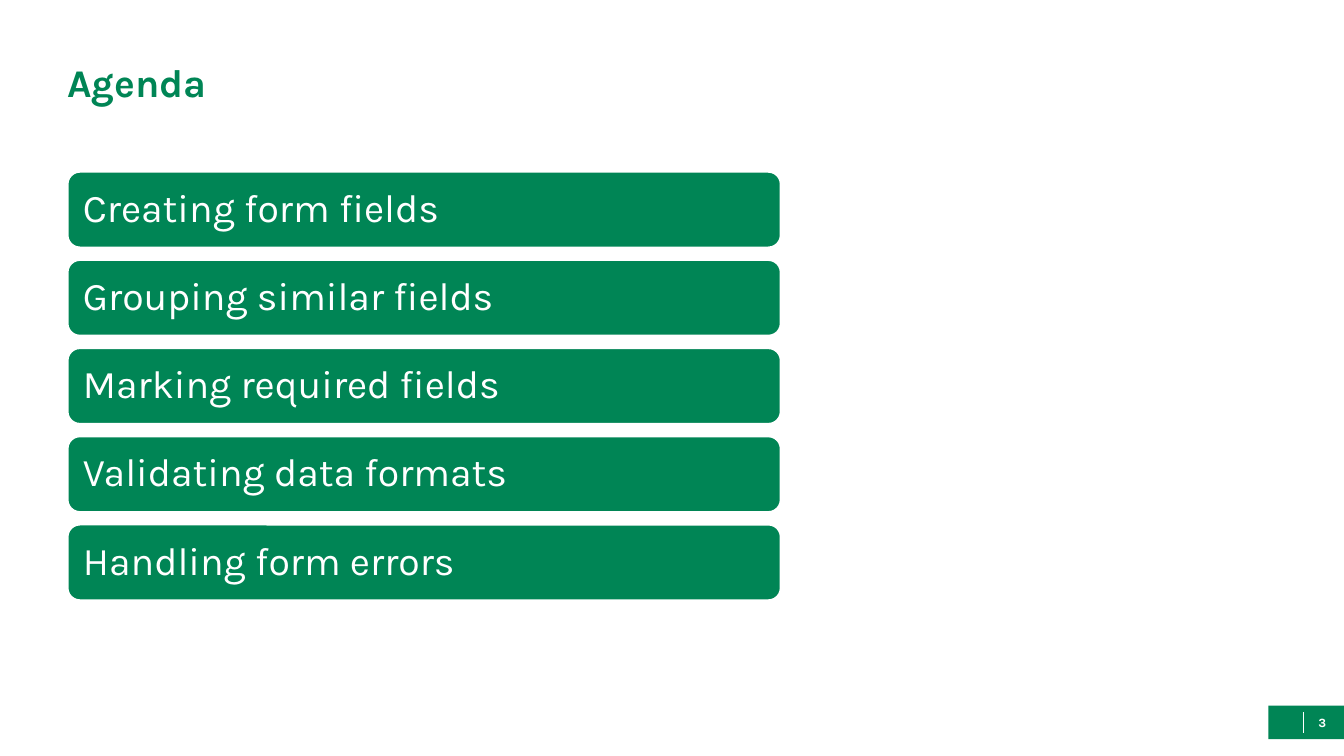
"""Build the agenda slide with five topic bars and a page badge."""
from lxml import etree
from pptx import Presentation
from pptx.dml.color import RGBColor
from pptx.enum import shapes, text
from pptx.oxml import ns
from pptx.util import Pt

HEADING = "Agenda"
TOPICS = [
    "Creating form fields",
    "Grouping similar fields",
    "Marking required fields",
    "Validating data formats",
    "Handling form errors",
]
PAGE = "3"
GREEN, WHITE, FONT = "008555", "FFFFFF", "Karla"
LEFT, BAR_TOP, BAR_WIDTH, BAR_HEIGHT, BAR_STEP = 48, 122.4, 510, 54.7, 63


def color(value):
    return RGBColor.from_string(value)


def write(frame, words, size, ink, align, bold=False, inset=0):
    frame.text = words
    frame.word_wrap = True
    frame.vertical_anchor = text.MSO_ANCHOR.MIDDLE
    frame.margin_left = frame.margin_right = Pt(inset)
    frame.margin_top = frame.margin_bottom = Pt(inset)
    paragraph = frame.paragraphs[0]
    paragraph.alignment = align
    font = paragraph.runs[0].font
    font.name, font.size, font.bold = FONT, Pt(size), bold
    font.color.rgb = color(ink)
    return paragraph


def add_block(slide, kind, *box):
    block = slide.shapes.add_shape(kind, *map(Pt, box))
    block.shadow.inherit = False
    block.fill.solid()
    block.fill.fore_color.rgb = color(GREEN)
    return block


def add_badge(slide):
    badge = add_block(slide, shapes.MSO_SHAPE.RECTANGLE, 906, 504, 54, 24)
    badge.line.fill.background()
    divider = slide.shapes.add_connector(
        shapes.MSO_CONNECTOR.STRAIGHT, Pt(931), Pt(523.4), Pt(931), Pt(508.3))
    divider.line.color.rgb = color(WHITE)
    divider.line.width = Pt(1)
    etree.SubElement(divider._element.spPr, ns.qn("a:effectLst"))
    number = slide.shapes.add_textbox(Pt(938), Pt(509), Pt(13), Pt(14.4))
    write(number.text_frame, PAGE, 9, WHITE, text.PP_ALIGN.CENTER, bold=True)


def add_topic(slide, index, topic):
    bar = add_block(slide, shapes.MSO_SHAPE.ROUNDED_RECTANGLE,
                    LEFT, BAR_TOP + index * BAR_STEP, BAR_WIDTH, BAR_HEIGHT)
    bar.line.color.rgb = color(WHITE)
    bar.line.width = Pt(2)
    label = write(bar.text_frame, topic, 28, WHITE, text.PP_ALIGN.LEFT, inset=8.64)
    label.line_spacing = 0.9


def main():
    deck = Presentation()
    deck.slide_width, deck.slide_height = Pt(960), Pt(540)
    slide = deck.slides.add_slide(deck.slide_layouts[5])
    title = slide.shapes.title
    title.left, title.top, title.width, title.height = map(Pt, (LEFT, 21.6, 864, 74.2))
    write(title.text_frame, HEADING, 28, GREEN, text.PP_ALIGN.LEFT, bold=True)
    add_badge(slide)
    for index, topic in enumerate(TOPICS):
        add_topic(slide, index, topic)
    deck.save("out.pptx")


if __name__ == "__main__":
    main()
